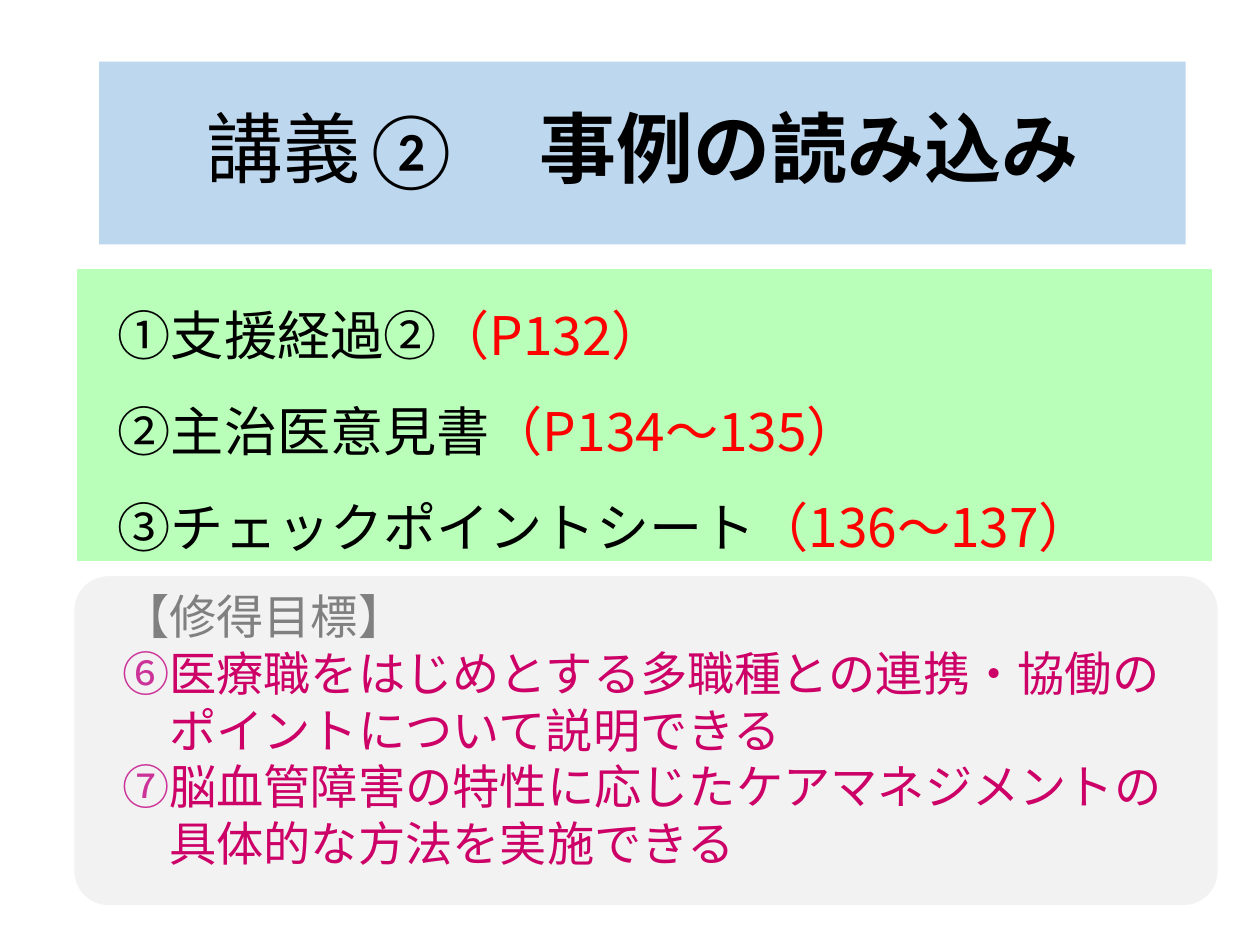
from dataclasses import dataclass

from pptx import Presentation
from pptx.dml.color import RGBColor
from pptx.enum.shapes import MSO_SHAPE
from pptx.enum.text import MSO_ANCHOR, PP_ALIGN
from pptx.oxml.ns import qn
from pptx.util import Pt

RECTANGLE = MSO_SHAPE.RECTANGLE
ROUNDED = MSO_SHAPE.ROUNDED_RECTANGLE
TOP, MIDDLE = MSO_ANCHOR.TOP, MSO_ANCHOR.MIDDLE
LEFT, CENTER, JUSTIFY = PP_ALIGN.LEFT, PP_ALIGN.CENTER, PP_ALIGN.JUSTIFY
TITLE_ONLY = 5


@dataclass(frozen=True)
class Theme:
    title_font: str = "Calibri"
    body_font: str = "Noto Sans CJK JP"
    title_size: float = 78.2
    topic_size: float = 54
    goal_size: float = 48
    indent: float = 36
    black: str = "000000"
    white: str = "FFFFFF"
    red: str = "FF0000"
    gray: str = "808080"
    purple: str = "CC3399"
    magenta: str = "CC0066"
    title_fill: str = "BDD7EE"
    topic_fill: str = "B9FFB9"
    goal_fill: str = "F2F2F2"


def add_run(paragraph, text, *, font, size, color, bold=False):
    run = paragraph.add_run()
    run.text = text
    run.font.name = font
    run.font.size = Pt(size)
    run.font.bold = bold
    run.font.color.rgb = RGBColor.from_string(color)
    east_asian = run.font._element.makeelement(qn("a:ea"), {"typeface": font})
    run.font._element.find(qn("a:latin")).addnext(east_asian)


class SlideBuilder:
    def __init__(self, slide, theme):
        self.slide = slide
        self.theme = theme

    def fill(self, shape, color):
        shape.fill.solid()
        shape.fill.fore_color.rgb = RGBColor.from_string(color)

    def title(self, box, runs):
        """Runs are (text, bold) pairs."""
        shape = self.slide.shapes.title
        shape.left, shape.top, shape.width, shape.height = map(Pt, box)
        self.fill(shape, self.theme.title_fill)
        shape.text_frame.vertical_anchor = MIDDLE
        paragraph = shape.text_frame.paragraphs[0]
        paragraph.alignment = CENTER
        paragraph.line_spacing = 0.9
        for text, bold in runs:
            add_run(paragraph, text, font=self.theme.title_font,
                    size=self.theme.title_size, color=self.theme.black, bold=bold)

    def panel(self, kind, box, color, border=None, corner=None):
        shape = self.slide.shapes.add_shape(kind, *map(Pt, box))
        shape.shadow.inherit = False
        self.fill(shape, color)
        if border:
            shape.line.color.rgb = RGBColor.from_string(border)
            shape.line.width = Pt(0.75)
        else:
            shape.line.fill.background()
        if corner is not None:
            shape.adjustments[0] = corner
        return shape

    def lines(self, shape, lines, size, margins, alignment, spacing):
        """Each line is a list of (text, color) pairs."""
        frame = shape.text_frame
        frame.word_wrap = True
        frame.vertical_anchor = TOP
        (frame.margin_left, frame.margin_top,
         frame.margin_right, frame.margin_bottom) = map(Pt, margins)
        for index, runs in enumerate(lines):
            paragraph = frame.add_paragraph() if index else frame.paragraphs[0]
            paragraph.level = 1
            paragraph.alignment = alignment
            paragraph.line_spacing = spacing
            properties = paragraph._p.get_or_add_pPr()
            properties.set("marL", str(Pt(self.theme.indent)))
            properties.set("indent", "0")
            for text, color in runs:
                add_run(paragraph, text, font=self.theme.body_font, size=size, color=color)


def main():
    theme = Theme()
    presentation = Presentation()
    presentation.slide_width, presentation.slide_height = Pt(1280), Pt(960)
    slide = presentation.slides.add_slide(presentation.slide_layouts[TITLE_ONLY])
    builder = SlideBuilder(slide, theme)

    # Title
    builder.title((100.8, 62.6, 1103.8, 185.8),
                  [("講義②\u3000".replace("\u3000", "　"), False), ("事例の読み込み", True)])

    # Topics with page references
    topics = [("①支援経過②", "（P132）"),
              ("②主治医意見書", "（P134～135）"),
              ("③チェックポイントシート", "（136～137）")]
    panel = builder.panel(RECTANGLE, (77.8, 272.9, 1154.2, 297.4),
                          theme.topic_fill, border=theme.white)
    builder.lines(panel, [[(topic, theme.black), (pages, theme.red)] for topic, pages in topics],
                  theme.topic_size, (5.8, 2.2, 5.8, 0.7), LEFT, 1.5)

    # Learning goals
    goals = [("⑥", "医療職をはじめとする多職種との連携・協働の", "　ポイントについて説明できる"),
             ("⑦", "脳血管障害の特性に応じたケアマネジメントの", "　具体的な方法を実施できる")]
    goal_lines = [[("【修得目標】", theme.gray)]]
    for number, first, second in goals:
        goal_lines += [[(number, theme.purple), (first, theme.magenta)],
                       [(second, theme.magenta)]]
    panel = builder.panel(ROUNDED, (75.6, 585.4, 1161.4, 334.1), theme.goal_fill, corner=0.104)
    builder.lines(panel, goal_lines, theme.goal_size, (2.2, 1.4, 2.2, 1.4), JUSTIFY, 1)

    presentation.save("out.pptx")


if __name__ == "__main__":
    main()
